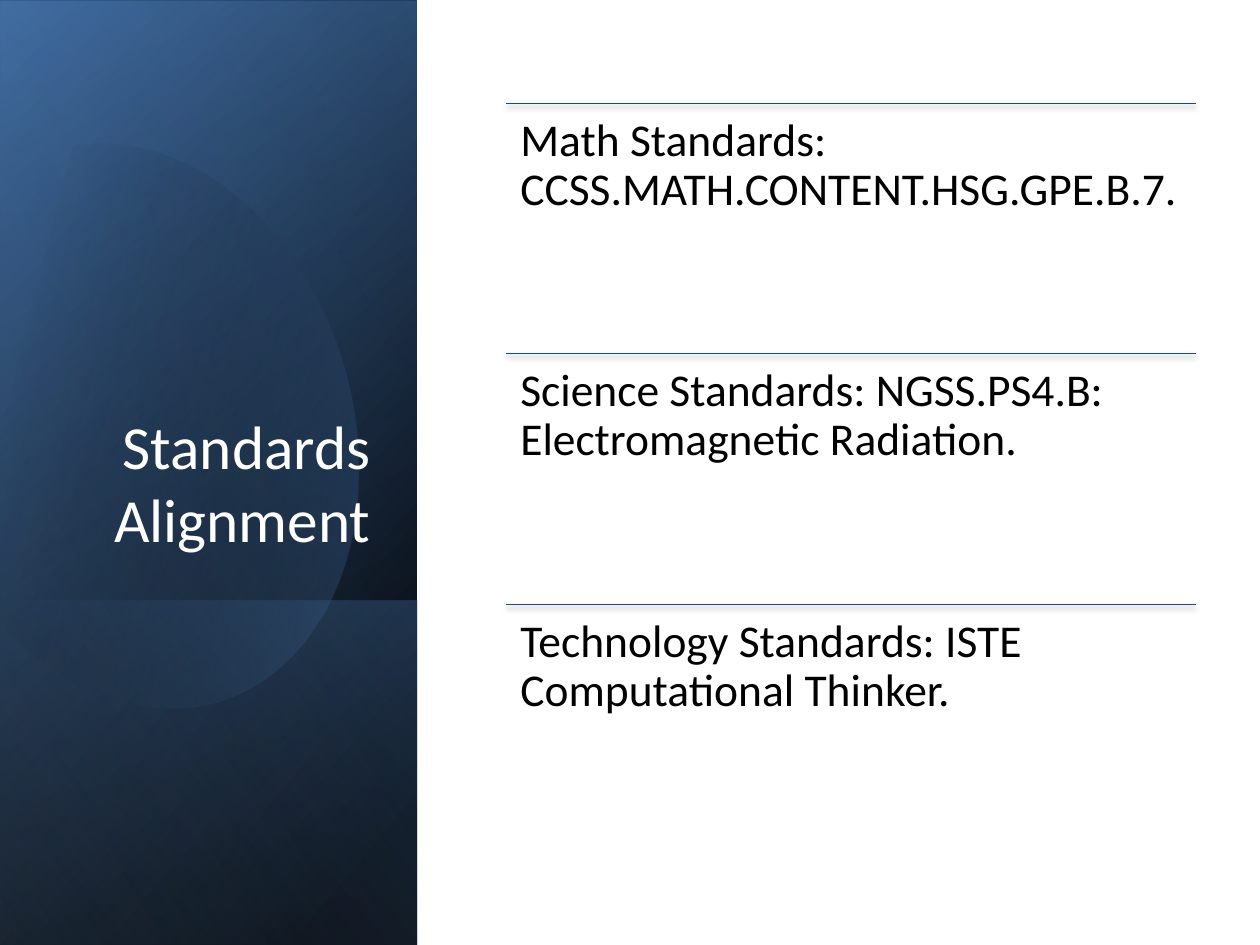
"""Build the Standards Alignment slide with a gradient side panel and three ruled entries."""
from math import cos, radians, sin

from lxml.etree import SubElement
from pptx import Presentation
from pptx.dml.color import RGBColor
from pptx.enum.shapes import MSO_CONNECTOR, MSO_SHAPE
from pptx.enum.text import MSO_ANCHOR, PP_ALIGN
from pptx.oxml.ns import qn
from pptx.util import Cm, Pt

colour = RGBColor.from_string
deck = Presentation()
deck.slide_width, deck.slide_height = Cm(25.4), Cm(19.05)
page = deck.slides.add_slide(deck.slide_layouts[6])


def paint(shape, stops, angle):
    shape.shadow.inherit = False
    shape.line.fill.background()
    shape.fill.gradient()
    gradient = shape._element.spPr.find(qn("a:gradFill"))
    stop_list = gradient.find(qn("a:gsLst"))
    for old in list(stop_list):
        stop_list.remove(old)
    for position, tone, opacity in stops:
        stop = SubElement(stop_list, qn("a:gs"), pos=str(position * 1000))
        tint = SubElement(stop, qn("a:srgbClr"), val=tone)
        SubElement(tint, qn("a:alpha"), val=str(opacity * 1000))
    shape.fill.gradient_angle = 360 - angle


def write(left, top, width, height, inset, text, size, tone):
    box = page.shapes.add_textbox(Cm(left), Cm(top), Cm(width), Cm(height))
    frame = box.text_frame
    frame.word_wrap = True
    frame.margin_left = frame.margin_right = Cm(inset[0])
    frame.margin_top = frame.margin_bottom = Cm(inset[1])
    para = frame.paragraphs[0]
    span = para.add_run()
    span.text = text
    span.font.name, span.font.size = "Calibri", Pt(size)
    span.font.color.rgb = colour(tone)
    return frame, para


layers = [
    ("panel", (-5.32, 5.32, 19.05), [(0, "000000", 100), (8, "000000", 100), (100, "366092", 100)], 50),
    ("panel", (-5.32, 5.36, 19.05), [(0, "000000", 0), (99, "4F81BD", 46), (100, "4F81BD", 46)], 30),
    ("panel", (0.74, 11.38, 6.96), [(0, "4F81BD", 29), (2, "4F81BD", 29), (100, "000000", 30)], 130),
    ("oval", (2.74, 8.5, 4.34, 5.79), [(0, "000000", 0), (29, "000000", 0), (100, "4F81BD", 43)], 30),
    ("panel", (-5.32, 5.32, 19.05), [(0, "000000", 0), (99, "93B3D7", 11), (100, "93B3D7", 11)], 120),
]
for kind, place, stops, angle in layers:
    if kind == "panel":
        left, top, length = place
        shape = page.shapes.add_shape(MSO_SHAPE.RECTANGLE, Cm(left), Cm(top), Cm(length), Cm(8.4))
        shape.rotation = 90
        shape._element.spPr.xfrm.set("flipH", "1")
    else:
        x, y, across, down = place
        points = [
            (Cm(x + across * cos(radians(turn))), Cm(y + down * sin(radians(turn))))
            for turn in range(-118, 151, 4)
        ]
        builder = page.shapes.build_freeform(*points[0])
        builder.add_line_segments(points[1:], close=True)
        shape = builder.convert_to_shape()
        shape.rotation = 343.9
    paint(shape, stops, angle)

frame, para = write(1.22, 4.67, 6.5, 6.65, (0.25, 0.13), "Standards Alignment", 35, "FFFFFF")
frame.vertical_anchor = MSO_ANCHOR.BOTTOM
para.alignment = PP_ALIGN.RIGHT

standards = [
    "Math Standards: CCSS.MATH.CONTENT.HSG.GPE.B.7.",
    "Science Standards: NGSS.PS4.B: Electromagnetic Radiation.",
    "Technology Standards: ISTE Computational Thinker.",
]
left, width, pitch = 10.21, 13.89, 5.05
for index, standard in enumerate(standards):
    top = 2.08 + index * pitch
    rule = page.shapes.add_connector(
        MSO_CONNECTOR.STRAIGHT, Cm(left), Cm(top), Cm(left + width), Cm(top)
    )
    rule.line.color.rgb = colour("1D497D")
    rule.line.width = Pt(0.75)
    effects = SubElement(rule._element.spPr, qn("a:effectLst"))
    shadow = SubElement(
        effects, qn("a:outerShdw"), blurRad=str(Pt(3.1)), dist=str(Pt(1.8)), dir="5400000", rotWithShape="0"
    )
    tint = SubElement(shadow, qn("a:srgbClr"), val="000000")
    SubElement(tint, qn("a:alpha"), val="35000")
    frame, para = write(left, top, width, pitch, (0.28, 0.28), standard, 26, "000000")
    para.line_spacing = 0.9

deck.save("out.pptx")
